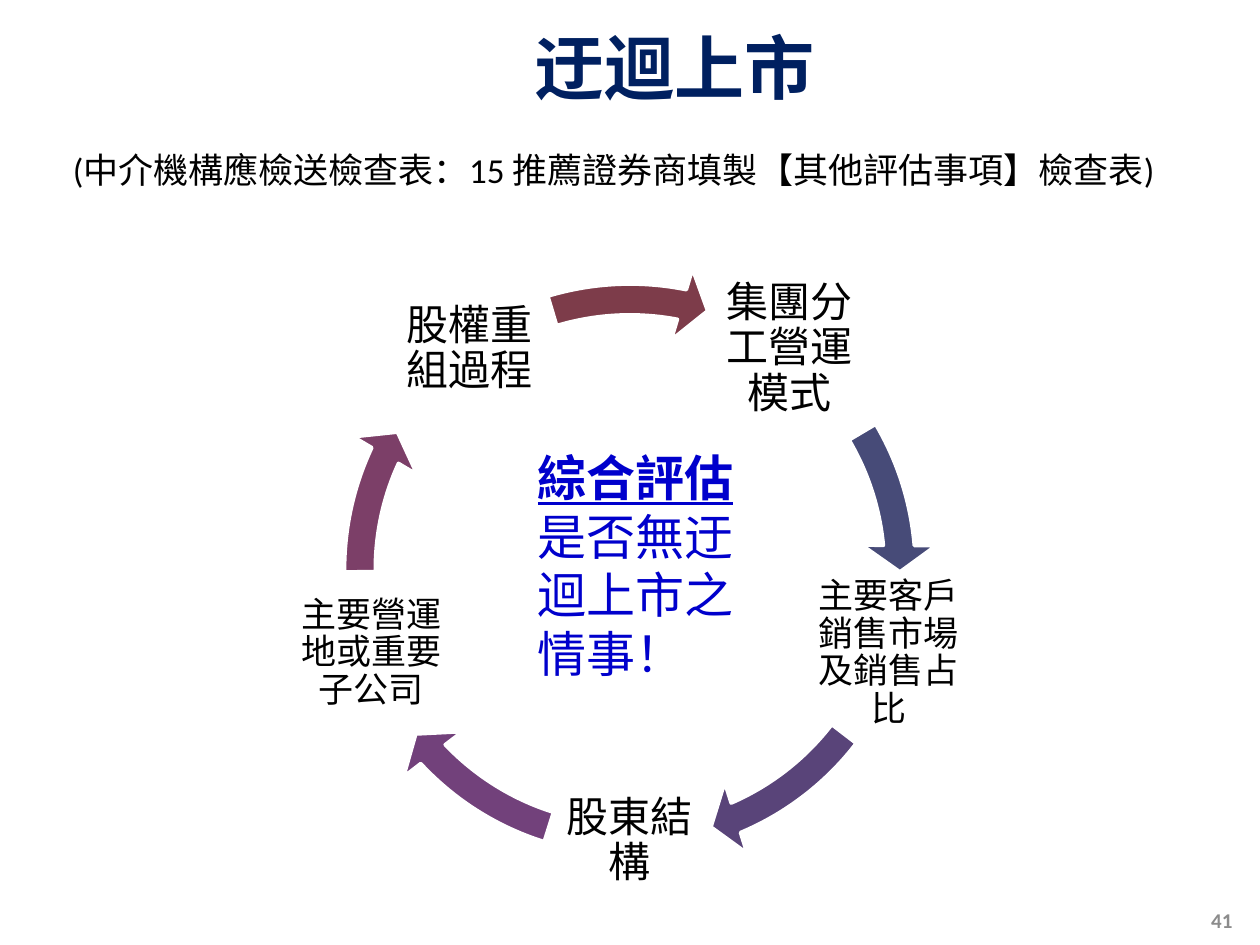
from math import cos, radians, sin

from pptx import Presentation
from pptx.dml.color import RGBColor
from pptx.enum.shapes import MSO_SHAPE
from pptx.enum.text import MSO_ANCHOR, PP_ALIGN
from pptx.util import Inches, Pt

ARROW = MSO_SHAPE.CIRCULAR_ARROW
TOP, MID = MSO_ANCHOR.TOP, MSO_ANCHOR.MIDDLE
LEFT, MIDDLE, RIGHT = PP_ALIGN.LEFT, PP_ALIGN.CENTER, PP_ALIGN.RIGHT
COLS, ROWS = 100, 75
HUB_X, HUB_Y, RADIUS = 50, 45.2, 21.6
LABEL, RING = 13, 48.7
HUES = {
    "title": "002060", "text": "000000", "focus": "0000CC",
    "page": "8C8C8C", "edge": "FFFFFF", "navy": "474B78",
    "violet": "594479", "purple": "72417B", "plum": "7C3F68",
    "wine": "7D3C4A",
}
STEPS = [
    ("集團分工營運模式", 24, "navy", 212.94, 197.66),
    ("主要客戶銷售市場及銷售占比", 20, "violet", 40.15, 22.53),
    ("股東結構", 24, "purple", 82.11, 64.49),
    ("主要營運地或重要子公司", 20, "plum", 122.98, 107.71),
    ("股權重組過程", 24, "wine", 168.66, 151.98),
]


class Deck:
    """Draws styled elements on one slide, placed by grid columns and rows."""

    def __init__(self):
        self.show = Presentation()
        self.show.slide_width, self.show.slide_height = Inches(10), Inches(7.5)
        self.slide = self.show.slides.add_slide(self.show.slide_layouts[6])

    def place(self, x, y, wide, high):
        col = self.show.slide_width / COLS
        row = self.show.slide_height / ROWS
        return [round(n) for n in (x * col, y * row, wide * col, high * row)]

    def hue(self, name):
        return RGBColor.from_string(HUES[name])

    def text(self, box, words, size, hue="text", face="Calibri", align=LEFT,
             anchor=TOP, bold=False, lead=None, inset=None):
        frame = self.slide.shapes.add_textbox(*self.place(*box)).text_frame
        frame.word_wrap = True
        frame.vertical_anchor = anchor
        if inset is not None:
            frame.margin_left = frame.margin_right = Inches(inset)
            frame.margin_top = frame.margin_bottom = Inches(inset)
        para = frame.paragraphs[0]
        para.text = words
        para.alignment = align
        para.line_spacing = lead
        font = para.font
        font.name, font.size, font.bold = face, Pt(size), bold
        font.color.rgb = self.hue(hue)
        return para

    def label(self, angle, words, size):
        x = HUB_X + RADIUS * cos(radians(angle)) - LABEL / 2
        y = HUB_Y + RADIUS * sin(radians(angle)) - LABEL / 2
        self.text((x, y, LABEL, LABEL), words, size, align=MIDDLE,
                  anchor=MID, lead=0.9, inset=0.03)

    def arc(self, hue, end, start):
        box = self.place(HUB_X - RING / 2, HUB_Y - RING / 2, RING, RING)
        arrow = self.slide.shapes.add_shape(ARROW, *box)
        for i, value in enumerate((0.05, 3.36, end, start, 0.06)):
            arrow.adjustments[i] = value
        arrow.shadow.inherit = False
        arrow.fill.solid()
        arrow.fill.fore_color.rgb = self.hue(hue)
        arrow.line.color.rgb = self.hue("edge")
        arrow.line.width = Pt(2)

    def cycle(self, steps):
        for i, (words, size, hue, end, start) in enumerate(steps):
            self.label(-54 + i * 360 / len(steps), words, size)
            self.arc(hue, end, start)


def main():
    deck = Deck()
    deck.text((9.9, 2.1, 87.3, 6.3), "迂迴上市", 40, "title",
              "TeX Gyre Pagella", MIDDLE, MID, True)
    deck.cycle(STEPS)
    deck.text((92.5, 71, 6.3, 4), "41", 12, "page",
              align=RIGHT, anchor=MID, bold=True)
    deck.text((4.8, 11.3, 90.4, 4.4),
              "(中介機構應檢送檢查表：15 推薦證券商填製【其他評估事項】檢查表)", 20)
    focus = deck.text((41.7, 35, 20, 19.9), "綜合評估", 28, "focus",
                      "Noto Sans CJK SC")
    key = focus.runs[0].font
    key.bold = key.underline = True
    focus.add_run().text = "是否無迂迴上市之情事！"
    deck.show.save("out.pptx")


if __name__ == "__main__":
    main()
